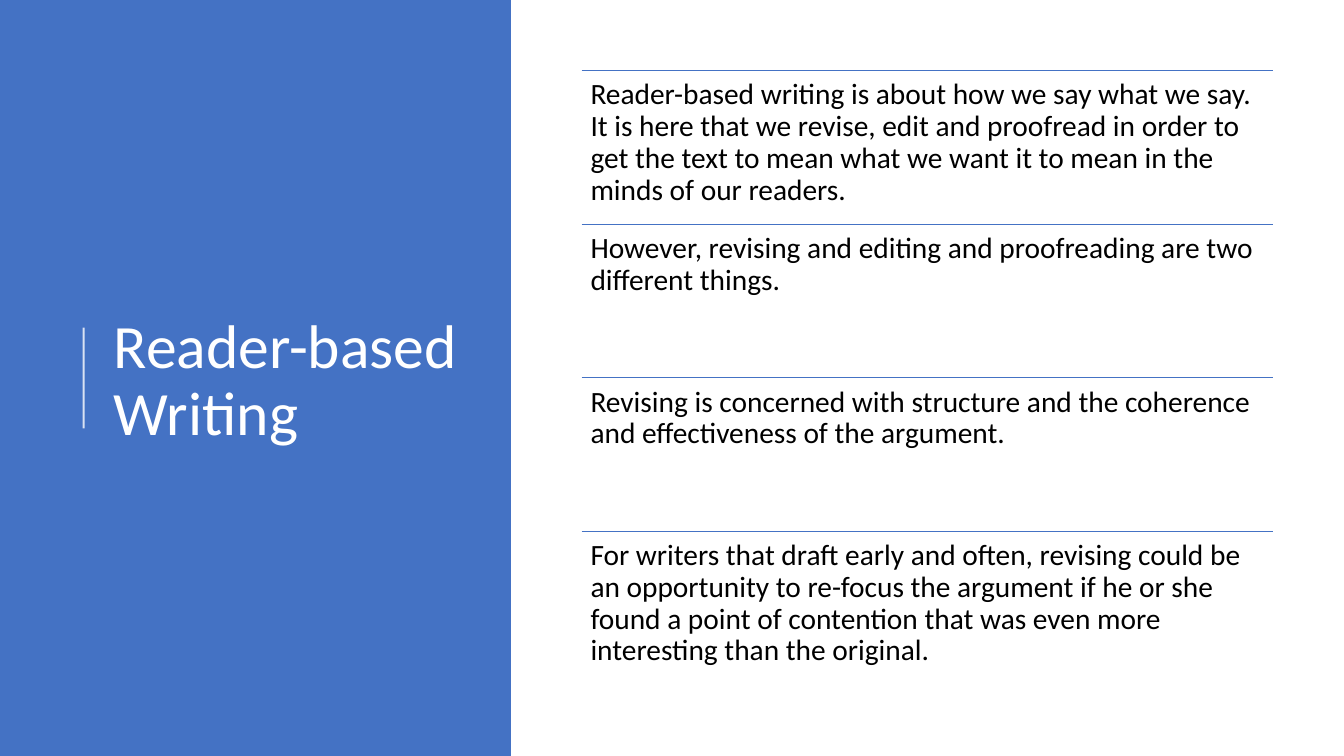
from dataclasses import dataclass

from lxml.etree import SubElement
from pptx import Presentation
from pptx.dml.color import RGBColor as RGB
from pptx.enum.shapes import MSO_CONNECTOR as Connector, MSO_SHAPE as Shape
from pptx.enum.text import MSO_ANCHOR as Anchor, MSO_AUTO_SIZE as AutoSize, PP_ALIGN as Align
from pptx.oxml.ns import qn
from pptx.util import Pt

TITLE = "Reader-based Writing"
POINTS = [
    "Reader-based writing is about how we say what we say. It is here that we "
    "revise, edit and proofread in order to get the text to mean what we want "
    "it to mean in the minds of our readers.",
    "However, revising and editing and proofreading are two different things.",
    "Revising is concerned with structure and the coherence and effectiveness "
    "of the argument.",
    "For writers that draft early and often, revising could be an opportunity "
    "to re-focus the argument if he or she found a point of contention that "
    "was even more interesting than the original.",
]


@dataclass(frozen=True)
class Theme:
    font: str = "Calibri"
    accent: RGB = RGB(0x44, 0x72, 0xC4)
    light: RGB = RGB(0xFF, 0xFF, 0xFF)
    dark: RGB = RGB(0, 0, 0)
    title_size: float = 44
    body_size: float = 21


THEME = Theme()
SLIDE_W, SLIDE_H = 960, 540
PANEL_W = 365
TITLE_BOX = (74.16, 56.16, 265.68, 433.44)
BAR_X, BAR_TOP, BAR_BOTTOM = 59.8, 234, 306
LIST_X, LIST_Y, LIST_W, ROW_H = 415.5, 50.5, 494, 109.68
ROW_INSET = 6.3


def place(sp, left, top, width, height):
    sp.left, sp.top, sp.width, sp.height = map(Pt, (left, top, width, height))


def add_line(s, start, end, color, width, alpha=None):
    """Draw a plain line; alpha is its opacity in percent."""
    line = s.shapes.add_connector(Connector.STRAIGHT, *map(Pt, start + end))
    line.line.color.rgb = color
    line.line.width = Pt(width)
    props = line.element.spPr
    if alpha is not None:
        rgb = props.find(".//" + qn("a:srgbClr"))
        SubElement(rgb, qn("a:alpha")).set("val", str(alpha * 1000))
    SubElement(props, qn("a:effectLst"))


def write(tf, text, size, color, inset_x, inset_y, anchor):
    tf.word_wrap = True
    tf.auto_size = AutoSize.NONE
    tf.vertical_anchor = anchor
    tf.margin_left = tf.margin_right = Pt(inset_x)
    tf.margin_top = tf.margin_bottom = Pt(inset_y)
    p = tf.paragraphs[0]
    p.alignment = Align.LEFT
    p.line_spacing = 0.9
    r = p.add_run()
    r.text = text
    r.font.name = THEME.font
    r.font.size = Pt(size)
    r.font.color.rgb = color


def add_title_panel(s):
    title = s.shapes.title
    panel = s.shapes.add_shape(Shape.RECTANGLE, 0, 0, Pt(PANEL_W), Pt(SLIDE_H))
    panel.shadow.inherit = False
    panel.fill.solid()
    panel.fill.fore_color.rgb = THEME.accent
    panel.line.fill.background()
    title.element.addprevious(panel.element)  # keeps the title in front
    add_line(s, (BAR_X, BAR_BOTTOM), (BAR_X, BAR_TOP), THEME.light, 1.5, alpha=80)
    place(title, *TITLE_BOX)
    write(title.text_frame, TITLE, THEME.title_size, THEME.light, 7.2, 3.6, Anchor.MIDDLE)


def add_points(s):
    for i, text in enumerate(POINTS):
        y = LIST_Y + i * ROW_H
        add_line(s, (LIST_X, y), (LIST_X + LIST_W, y), THEME.accent, 1)
        box = s.shapes.add_textbox(*map(Pt, (LIST_X, y, LIST_W, ROW_H)))
        write(box.text_frame, text, THEME.body_size, THEME.dark,
              ROW_INSET, ROW_INSET, Anchor.TOP)


def main():
    prs = Presentation()
    prs.slide_width, prs.slide_height = Pt(SLIDE_W), Pt(SLIDE_H)
    s = prs.slides.add_slide(prs.slide_layouts[5])
    add_title_panel(s)
    add_points(s)
    prs.save("out.pptx")


if __name__ == "__main__":
    main()
